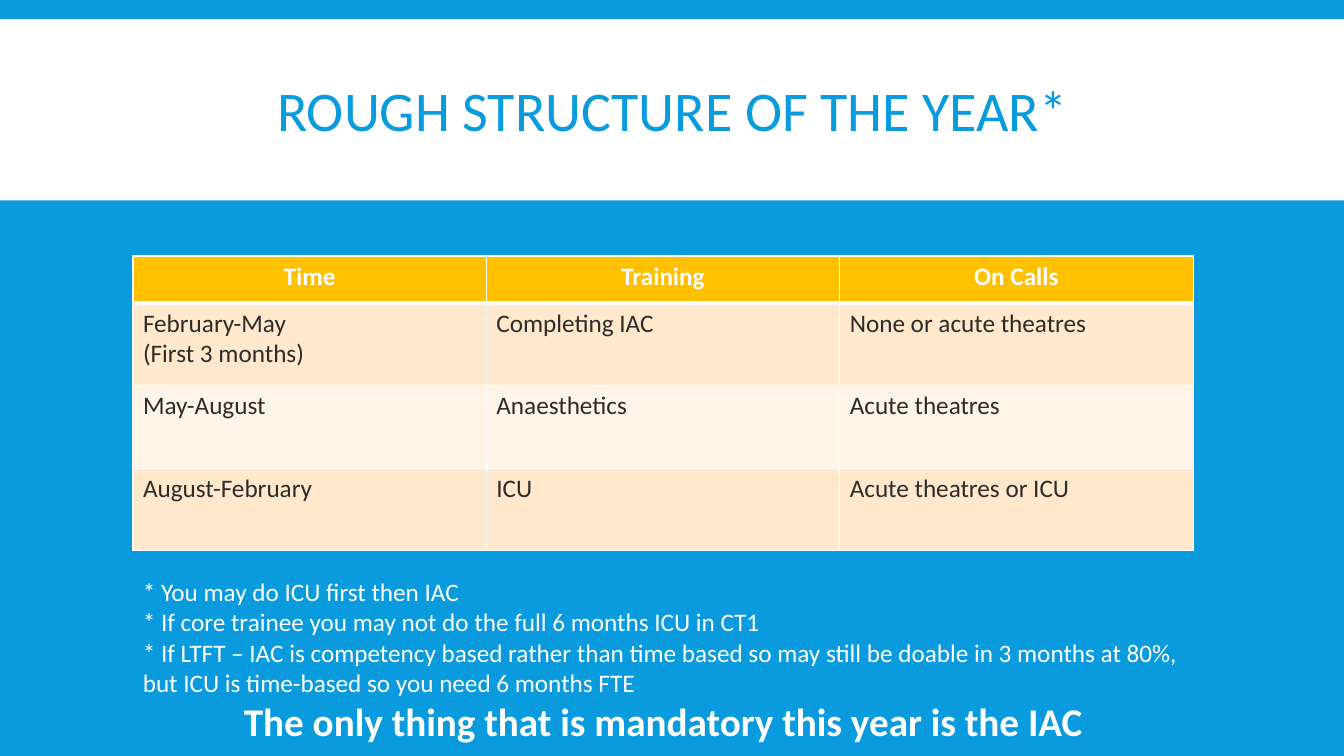
from lxml import etree
from pptx import Presentation
from pptx.dml.color import RGBColor
from pptx.enum.shapes import MSO_SHAPE
from pptx.enum.text import MSO_ANCHOR, PP_ALIGN
from pptx.oxml.ns import qn
from pptx.util import Cm, Pt

COLORS = {
    "blue": "099BDD",
    "white": "FFFFFF",
    "header": "FFC000",
    "band_dark": "FFE8CC",
    "band_light": "FFF4E7",
    "text": "2C2C2C",
}
FONT = "Calibri"
SLIDE_W, SLIDE_H = 33.87, 19.05
LEFT, TABLE_W = 3.35, 26.72

SCHEDULE = [
    ["Time", "Training", "On Calls"],
    ["February-May\n(First 3 months)", "Completing IAC", "None or acute theatres"],
    ["May-August", "Anaesthetics", "Acute theatres"],
    ["August-February", "ICU", "Acute theatres or ICU"],
]
NOTES = [
    "* You may do ICU first then IAC",
    "* If core trainee you may not do the full 6 months ICU in CT1",
    "* If LTFT – IAC is competency based rather than time based so may still be "
    "doable in 3 months at 80%, but ICU is time-based so you need 6 months FTE",
]
KEY_MESSAGE = "The only thing that is mandatory this year is the IAC"


def rgb(name):
    return RGBColor.from_string(COLORS[name])


def style(p, size, color, bold=False, align=PP_ALIGN.LEFT):
    p.alignment = align
    p.font.name = FONT
    p.font.size = Pt(size)
    p.font.bold = bold
    p.font.color.rgb = rgb(color)


def add_text_frame(s, x, y, w, h):
    tf = s.shapes.add_textbox(Cm(x), Cm(y), Cm(w), Cm(h)).text_frame
    tf.word_wrap = True
    return tf


def add_border(cell, side, width):
    tc_pr = cell._tc.get_or_add_tcPr()
    ln = etree.SubElement(tc_pr, qn(f"a:ln{side}"), w=str(Pt(width)))
    fill = etree.SubElement(ln, qn("a:solidFill"))
    etree.SubElement(fill, qn("a:srgbClr"), val=COLORS["white"])


def add_title_band(s, x, y, w, h):
    sp = s.shapes.add_shape(MSO_SHAPE.RECTANGLE, Cm(x), Cm(y), Cm(w), Cm(h))
    sp.shadow.inherit = False
    sp.fill.solid()
    sp.fill.fore_color.rgb = rgb("white")
    sp.line.fill.background()

    tf = add_text_frame(s, LEFT, y + 0.3, 27.18, h - 0.38)
    tf.vertical_anchor = MSO_ANCHOR.MIDDLE
    p = tf.paragraphs[0]
    p.text = "ROUGH STRUCTURE OF THE YEAR*"
    p.line_spacing = 0.85
    style(p, 40, "blue", align=PP_ALIGN.CENTER)


def add_schedule(s, x, y, w, header_h, row_h):
    n_rows, n_cols = len(SCHEDULE), len(SCHEDULE[0])
    h = header_h + row_h * (n_rows - 1)
    table = s.shapes.add_table(n_rows, n_cols, Cm(x), Cm(y), Cm(w), Cm(h)).table
    for column in table.columns:
        column.width = Cm(w / n_cols)
    for i, values in enumerate(SCHEDULE):
        is_header = i == 0
        table.rows[i].height = Cm(header_h if is_header else row_h)
        fill = "header" if is_header else "band_dark" if i % 2 else "band_light"
        for j, value in enumerate(values):
            cell = table.cell(i, j)
            cell.text = value
            for p in cell.text_frame.paragraphs:
                if is_header:
                    style(p, 18, "white", bold=True, align=PP_ALIGN.CENTER)
                else:
                    style(p, 18, "text")
            # A thick rule separates the header from the body
            widths = {"L": 1, "R": 1, "T": 3 if i == 1 else 1, "B": 3 if is_header else 1}
            for side, width in widths.items():
                add_border(cell, side, width)
            cell.fill.solid()
            cell.fill.fore_color.rgb = rgb(fill)


def add_notes(s, x, y, w, h):
    tf = add_text_frame(s, x, y, w, h)
    tf.text = "\n".join(NOTES + [KEY_MESSAGE])
    for p in tf.paragraphs[:-1]:
        style(p, 18, "white")
    style(tf.paragraphs[-1], 28, "white", bold=True, align=PP_ALIGN.CENTER)


def main():
    prs = Presentation()
    prs.slide_width, prs.slide_height = Cm(SLIDE_W), Cm(SLIDE_H)
    s = prs.slides.add_slide(prs.slide_layouts[6])
    s.background.fill.solid()
    s.background.fill.fore_color.rgb = rgb("blue")

    add_title_band(s, 0, 0.48, SLIDE_W, 4.57)
    add_schedule(s, LEFT, 6.45, TABLE_W, 1.19, 2.08)
    add_notes(s, LEFT, 14.4, TABLE_W, 4.52)
    prs.save("out.pptx")


if __name__ == "__main__":
    main()
